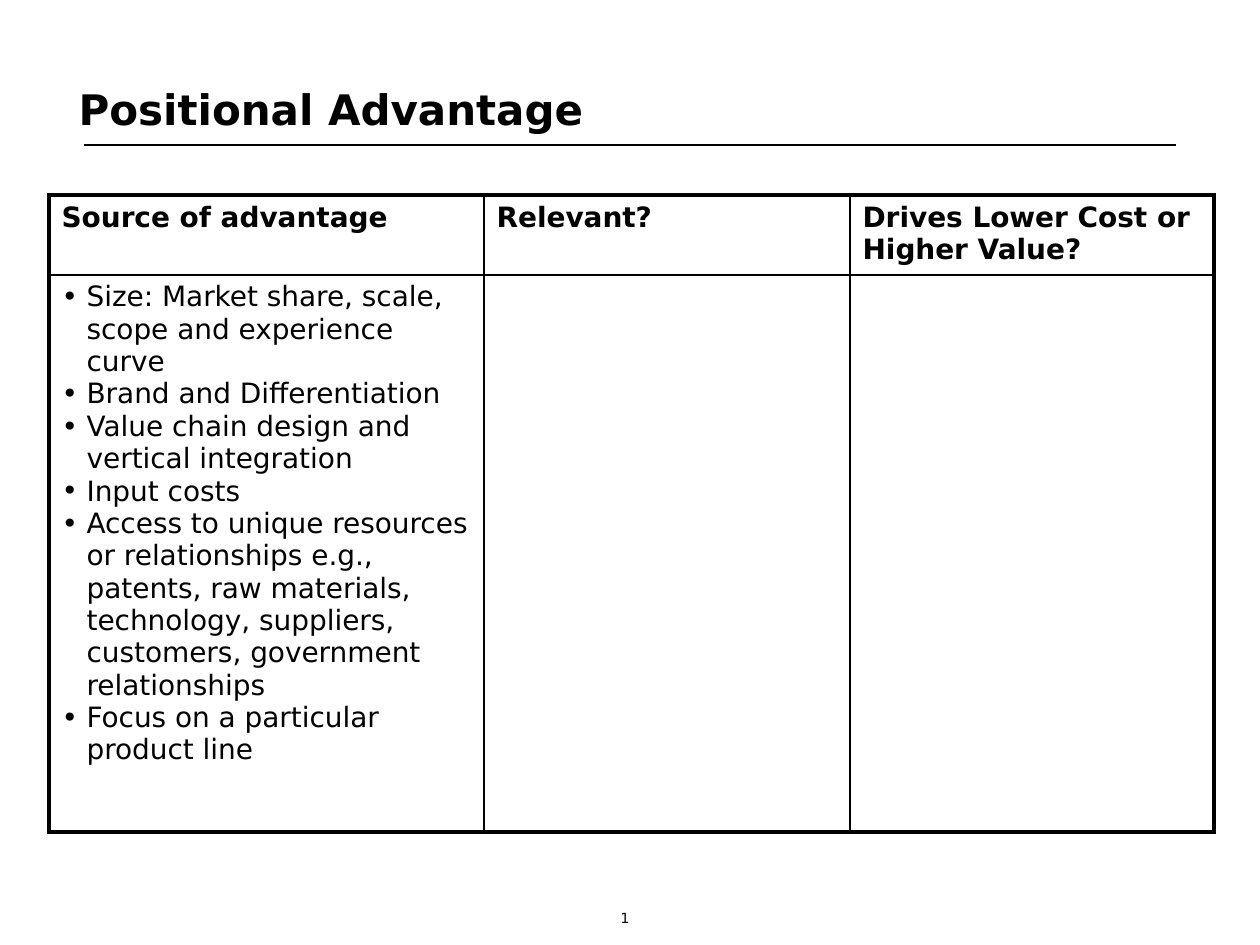
from lxml import etree
from pptx import Presentation, util as u
from pptx.dml.color import RGBColor
from pptx.enum import shapes, text
from pptx.oxml.ns import qn

TITLE = "Positional Advantage"
HEADERS = ["Source of advantage", "Relevant?", "Drives Lower Cost or Higher Value?"]
SOURCES = [
    "Size: Market share, scale, scope and experience curve",
    "Brand and Differentiation",
    "Value chain design and vertical integration",
    "Input costs",
    "Access to unique resources or relationships e.g., patents, raw materials, "
    "technology, suppliers, customers, government relationships",
    "Focus on a particular product line",
]
PAGE = "1"

FONT = "DejaVu Sans"
BLACK = RGBColor(0, 0, 0)
THICK, THIN = 2.25, 1
COLS = [435, 366, 364]
ROWS = [77, 557]
INDENT = 25


def px(n):
    return u.Emu(round(n * 914400 / 126))


def add_run(p, words, size, bold=False):
    r = p.add_run()
    r.text = words
    r.font.name, r.font.size, r.font.bold = FONT, u.Pt(size), bold
    r.font.color.rgb = BLACK


def add_bullet(p):
    pPr = p._p.get_or_add_pPr()
    pPr.set("marL", str(px(INDENT)))
    pPr.set("indent", str(-px(INDENT)))
    clr = etree.SubElement(pPr, qn("a:buClr"))
    etree.SubElement(clr, qn("a:srgbClr"), val=str(BLACK))
    etree.SubElement(pPr, qn("a:buFont"), typeface=FONT)
    etree.SubElement(pPr, qn("a:buChar"), char="•")


def set_borders(cell, row, col):
    outer = {
        "lnL": col == 0,
        "lnR": col == len(COLS) - 1,
        "lnT": row == 0,
        "lnB": row == len(ROWS) - 1,
    }
    tcPr = cell._tc.get_or_add_tcPr()
    for i, (tag, thick) in enumerate(outer.items()):
        ln = etree.Element(qn("a:" + tag), w=str(u.Pt(THICK if thick else THIN)))
        fill = etree.SubElement(ln, qn("a:solidFill"))
        etree.SubElement(fill, qn("a:srgbClr"), val=str(BLACK))
        tcPr.insert(i, ln)


prs = Presentation()
prs.slide_width, prs.slide_height = u.Inches(10), u.Inches(7.5)
s = prs.slides.add_slide(prs.slide_layouts[5])

rule = s.shapes.add_connector(shapes.MSO_CONNECTOR.STRAIGHT, px(84), px(145), px(1176), px(145))
rule.line.color.rgb = BLACK
rule.line.width = u.Pt(THIN)
etree.SubElement(rule._element.spPr, qn("a:effectLst"))

title = s.shapes.title
title.left, title.top, title.width, title.height = px(66), px(55), px(924), px(108)
tf = title.text_frame
tf.auto_size = text.MSO_AUTO_SIZE.NONE
tf.vertical_anchor = text.MSO_ANCHOR.MIDDLE
tf.paragraphs[0].alignment = text.PP_ALIGN.LEFT
add_run(tf.paragraphs[0], TITLE, 24, True)

page = s.shapes.add_textbox(px(541), px(910), px(168), px(35))
tf = page.text_frame
tf.word_wrap = False
tf.margin_left = tf.margin_right = tf.margin_top = tf.margin_bottom = 0
tf.paragraphs[0].alignment = text.PP_ALIGN.CENTER
add_run(tf.paragraphs[0], PAGE, 8)

table = s.shapes.add_table(
    len(ROWS), len(COLS), px(49), px(195), px(sum(COLS)), px(sum(ROWS))).table
table.first_row = table.horz_banding = False
for column, width in zip(table.columns, COLS):
    column.width = px(width)
for row, height in zip(table.rows, ROWS):
    row.height = px(height)
for i in range(len(ROWS)):
    for j in range(len(COLS)):
        cell = table.cell(i, j)
        cell.fill.background()
        set_borders(cell, i, j)

for j, header in enumerate(HEADERS):
    add_run(table.cell(0, j).text_frame.paragraphs[0], header, 16, True)

tf = table.cell(1, 0).text_frame
for i, source in enumerate(SOURCES):
    p = tf.add_paragraph() if i else tf.paragraphs[0]
    add_bullet(p)
    add_run(p, source, 16)

prs.save("out.pptx")
